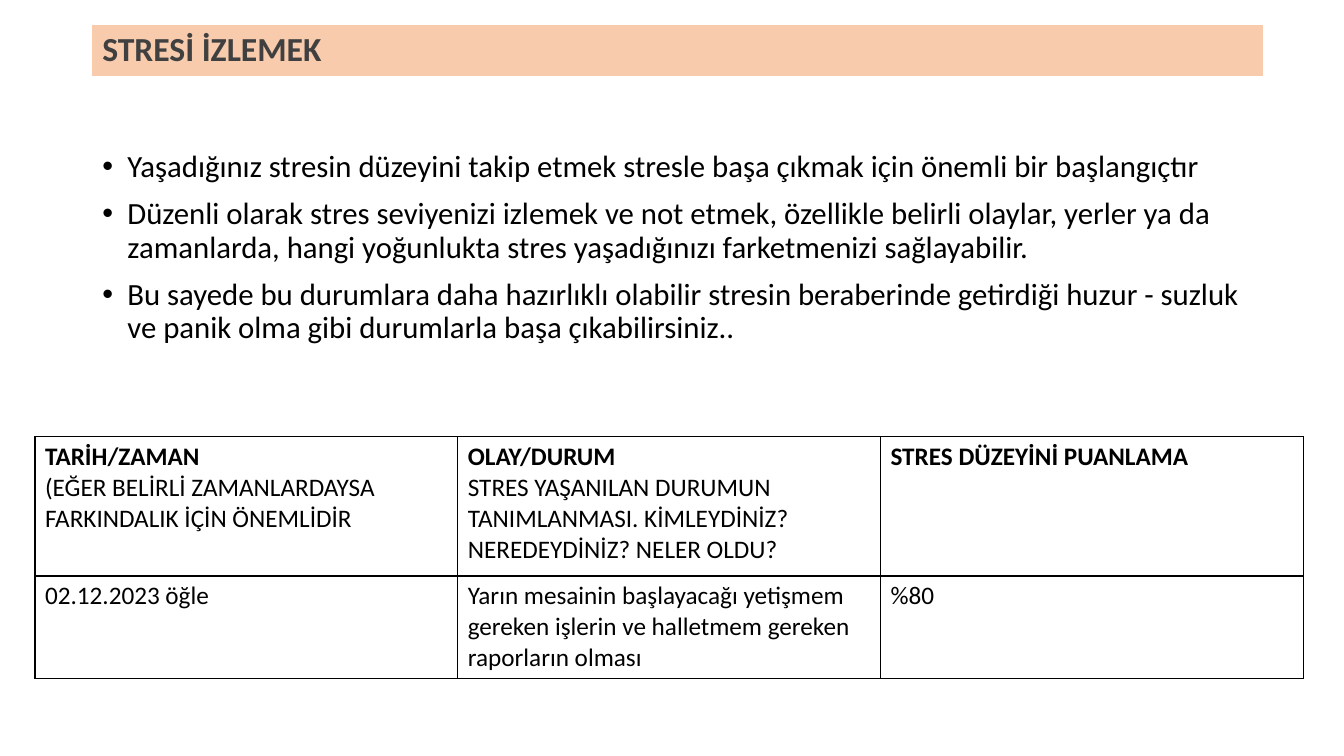
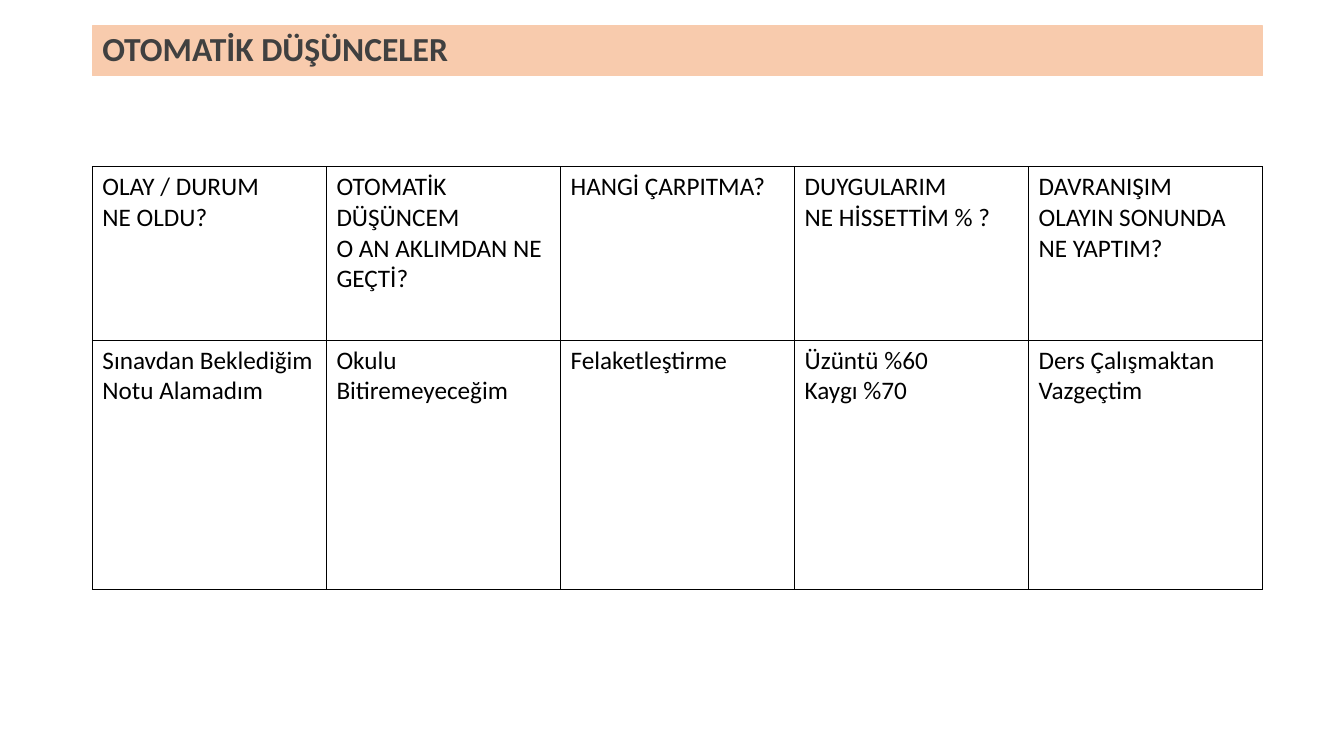
from lxml import etree
from pptx import Presentation
from pptx.dml.color import RGBColor
from pptx.enum.shapes import MSO_SHAPE
from pptx.enum.text import MSO_ANCHOR
from pptx.oxml.ns import qn
from pptx.util import Pt

RECTANGLE = MSO_SHAPE.RECTANGLE
MIDDLE = MSO_ANCHOR.MIDDLE

FONT = "Calibri"
COLORS = {"band": "F8CBAD", "title": "404040", "text": "000000", "border": "000000"}
SLIDE_WIDTH, SLIDE_HEIGHT = 960, 540
MARGIN, CONTENT_WIDTH = 66, 836
BAND_TOP, BAND_HEIGHT = 18.7, 35.3
TITLE_TOP, TITLE_HEIGHT = 22.3, 27.4
BODY_TOP, BODY_HEIGHT = 104.4, 375
BULLET_INDENT = 18

# A cell is a list of paragraphs, each a (text, bold) pair.
SLIDES = [
    {
        "title": "STRESİ İZLEMEK",
        "bullets": [
            "Yaşadığınız stresin düzeyini takip etmek stresle başa çıkmak için önemli bir başlangıçtır",
            "Düzenli olarak stres seviyenizi izlemek ve not etmek, özellikle belirli olaylar, "
            "yerler ya da zamanlarda, hangi yoğunlukta stres yaşadığınızı farketmenizi sağlayabilir.",
            "Bu sayede bu durumlara daha hazırlıklı olabilir stresin beraberinde getirdiği "
            "huzur - suzluk ve panik olma gibi durumlarla başa çıkabilirsiniz..",
        ],
        "table": {
            "left": 25, "top": 312, "width": 906, "row_heights": [99.4, 73],
            "rows": [
                [
                    [("TARİH/ZAMAN", True),
                     ("(EĞER BELİRLİ ZAMANLARDAYSA FARKINDALIK İÇİN ÖNEMLİDİR", False)],
                    [("OLAY/DURUM", True),
                     ("STRES YAŞANILAN DURUMUN TANIMLANMASI. KİMLEYDİNİZ? "
                      "NEREDEYDİNİZ? NELER OLDU?", False)],
                    [("STRES DÜZEYİNİ PUANLAMA", True)],
                ],
                [
                    [("02.12.2023 öğle", False)],
                    [("Yarın mesainin başlayacağı yetişmem gereken işlerin ve "
                      "halletmem gereken raporların olması", False)],
                    [("%80", False)],
                ],
            ],
        },
    },
    {
        "title": "OTOMATİK DÜŞÜNCELER",
        "bullets": [],
        "table": {
            "left": MARGIN, "top": 119, "width": CONTENT_WIDTH, "row_heights": [124, 178],
            "rows": [
                [
                    [("OLAY / DURUM", False), ("NE OLDU?", False)],
                    [("OTOMATİK DÜŞÜNCEM", False), ("O AN AKLIMDAN NE GEÇTİ?", False)],
                    [("HANGİ ÇARPITMA?", False)],
                    [("DUYGULARIM", False), ("NE HİSSETTİM % ?", False)],
                    [("DAVRANIŞIM", False), ("OLAYIN SONUNDA NE YAPTIM?", False)],
                ],
                [
                    [("Sınavdan Beklediğim Notu Alamadım", False)],
                    [("Okulu Bitiremeyeceğim", False)],
                    [("Felaketleştirme", False)],
                    [("Üzüntü %60", False), ("Kaygı %70", False)],
                    [("Ders Çalışmaktan Vazgeçtim", False)],
                ],
            ],
        },
    },
]


def rgb(name):
    return RGBColor.from_string(COLORS[name])


def write_paragraphs(frame, paragraphs, size, color="text"):
    """Fill a text frame with (text, bold) paragraphs and return them."""
    frame.word_wrap = True
    for index, (text, bold) in enumerate(paragraphs):
        paragraph = frame.add_paragraph() if index else frame.paragraphs[0]
        run = paragraph.add_run()
        run.text = text
        run.font.name = FONT
        run.font.size = Pt(size)
        run.font.bold = bold
        run.font.color.rgb = rgb(color)
    return frame.paragraphs


def add_title(slide, title):
    band = slide.shapes.add_shape(
        RECTANGLE, Pt(MARGIN), Pt(BAND_TOP), Pt(CONTENT_WIDTH), Pt(BAND_HEIGHT))
    band.shadow.inherit = False
    band.fill.solid()
    band.fill.fore_color.rgb = rgb("band")
    band.line.color.rgb = rgb("band")
    band.line.width = Pt(1)

    heading = slide.shapes.add_textbox(
        Pt(MARGIN), Pt(TITLE_TOP), Pt(CONTENT_WIDTH), Pt(TITLE_HEIGHT)).text_frame
    heading.vertical_anchor = MIDDLE
    write_paragraphs(heading, [(title, True)], 24, "title")[0].line_spacing = 0.9


def add_bullets(slide, bullets):
    body = slide.shapes.add_textbox(
        Pt(MARGIN), Pt(BODY_TOP), Pt(CONTENT_WIDTH), Pt(BODY_HEIGHT)).text_frame
    for paragraph in write_paragraphs(body, [(text, False) for text in bullets], 22):
        paragraph.line_spacing = 0.9
        paragraph.space_before = Pt(10)
        properties = paragraph._p.get_or_add_pPr()
        properties.set("marL", str(Pt(BULLET_INDENT)))
        properties.set("indent", str(-Pt(BULLET_INDENT)))
        etree.SubElement(properties, qn("a:buFont"), typeface="Arial")
        etree.SubElement(properties, qn("a:buChar"), char="•")


def add_borders(cell):
    properties = cell._tc.get_or_add_tcPr()
    for side in ("lnL", "lnR", "lnT", "lnB"):
        line = etree.SubElement(properties, qn(f"a:{side}"), w=str(Pt(1)))
        fill = etree.SubElement(line, qn("a:solidFill"))
        etree.SubElement(fill, qn("a:srgbClr"), val=COLORS["border"])


def add_grid(slide, left, top, width, row_heights, rows):
    """Add a bordered table with equal columns."""
    column_count = len(rows[0])
    table = slide.shapes.add_table(
        len(rows), column_count, Pt(left), Pt(top), Pt(width), Pt(sum(row_heights))).table
    table.first_row = False
    table.horz_banding = False
    for column in table.columns:
        column.width = Pt(width / column_count)
    for row, height, contents in zip(table.rows, row_heights, rows):
        row.height = Pt(height)
        for cell, paragraphs in zip(row.cells, contents):
            add_borders(cell)
            cell.fill.background()
            write_paragraphs(cell.text_frame, paragraphs, 18)


def main():
    deck = Presentation()
    deck.slide_width, deck.slide_height = Pt(SLIDE_WIDTH), Pt(SLIDE_HEIGHT)
    blank = deck.slide_layouts[6]
    for content in SLIDES:
        slide = deck.slides.add_slide(blank)
        add_title(slide, content["title"])
        if content["bullets"]:
            add_bullets(slide, content["bullets"])
        add_grid(slide, **content["table"])
    deck.save("out.pptx")


if __name__ == "__main__":
    main()
